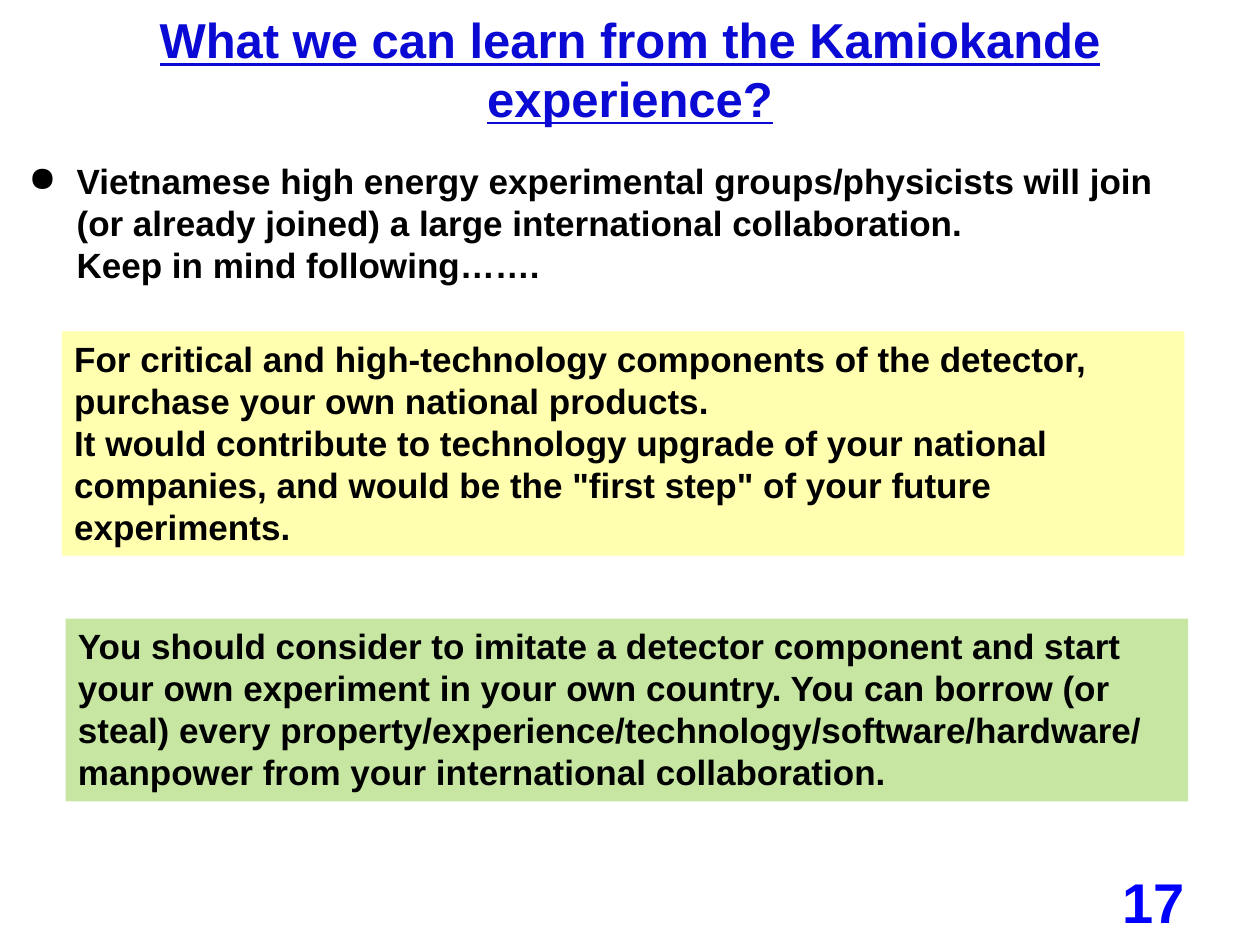
import pptx
import pptx.util
import pptx.dml.color
import pptx.enum.shapes
import pptx.enum.text
import pptx.oxml

Inches = pptx.util.Inches
RGBColor = pptx.dml.color.RGBColor
Align = pptx.enum.text.PP_ALIGN
Anchor = pptx.enum.text.MSO_ANCHOR

NAVY = RGBColor(0x0A, 0x0A, 0xD4)
BLUE = RGBColor(0x00, 0x00, 0xFF)
BLACK = RGBColor(0x00, 0x00, 0x00)
YELLOW = RGBColor(0xFF, 0xFF, 0xAF)
GREEN = RGBColor(0xC6, 0xE6, 0xA2)
SPACE = "http://schemas.openxmlformats.org/drawingml/2006/main"


def write(shape, text, size, color, align=Align.LEFT, anchor=Anchor.TOP):
    frame = shape.text_frame
    frame.word_wrap = True
    frame.vertical_anchor = anchor
    para = frame.paragraphs[0]
    para.text = text
    para.alignment = align
    for run in para.runs:
        run.font.name = "Arial"
        run.font.size = pptx.util.Pt(size)
        run.font.bold = True
        run.font.color.rgb = color
    return para


def add_title(slide, box, text):
    para = write(slide.shapes.add_textbox(*box), text, 28, NAVY, Align.CENTER)
    for run in para.runs:
        run.font.underline = True


def add_bullet(slide, box, text):
    para = write(slide.shapes.add_textbox(*box), text, 20, BLACK)
    props = para._p.get_or_add_pPr()
    indent = Inches(0.38)
    props.set("marL", str(indent))
    props.set("indent", str(-indent))
    props.append(pptx.oxml.parse_xml(f'<a:buChar xmlns:a="{SPACE}" char="●"/>'))


def add_panel(slide, box, text, fill):
    kind = pptx.enum.shapes.MSO_SHAPE.RECTANGLE
    panel = slide.shapes.add_shape(kind, *box)
    panel.shadow.inherit = False
    panel.fill.solid()
    panel.fill.fore_color.rgb = fill
    panel.line.fill.background()
    write(panel, text, 20, BLACK)


def add_number(slide, box, text):
    write(slide.shapes.add_textbox(*box), text, 32, BLUE, Align.RIGHT, Anchor.MIDDLE)


def area(*sides):
    return [Inches(side) for side in sides]


def main():
    deck = pptx.Presentation()
    deck.slide_width, deck.slide_height = area(10, 7.5)
    slide = deck.slides.add_slide(deck.slide_layouts[6])
    add_title(slide, area(0, 0.03, 10, 1.04),
              "What we can learn from the Kamiokande experience?")
    add_bullet(slide, area(0.13, 1.22, 9.7, 1.11),
               "Vietnamese high energy experimental groups/physicists will join\n"
               "(or already joined) a large international collaboration.\n"
               "Keep in mind following…….")
    add_panel(slide, area(0.49, 2.63, 8.91, 1.78),
              "For critical and high-technology components of the detector, \n"
              "purchase your own national products.\n"
              "It would contribute to technology upgrade of your national companies, "
              'and would be the "first step" of your future experiments.', YELLOW)
    add_panel(slide, area(0.52, 4.91, 8.91, 1.45),
              "You should consider to imitate a detector component and start\n"
              "your own experiment in your own country. You can borrow (or steal) "
              "every property/experience/technology/software/hardware/ "
              "manpower from your international collaboration.", GREEN)
    add_number(slide, area(7.17, 6.95, 2.33, 0.4), "17")
    deck.save("out.pptx")


if __name__ == "__main__":
    main()
